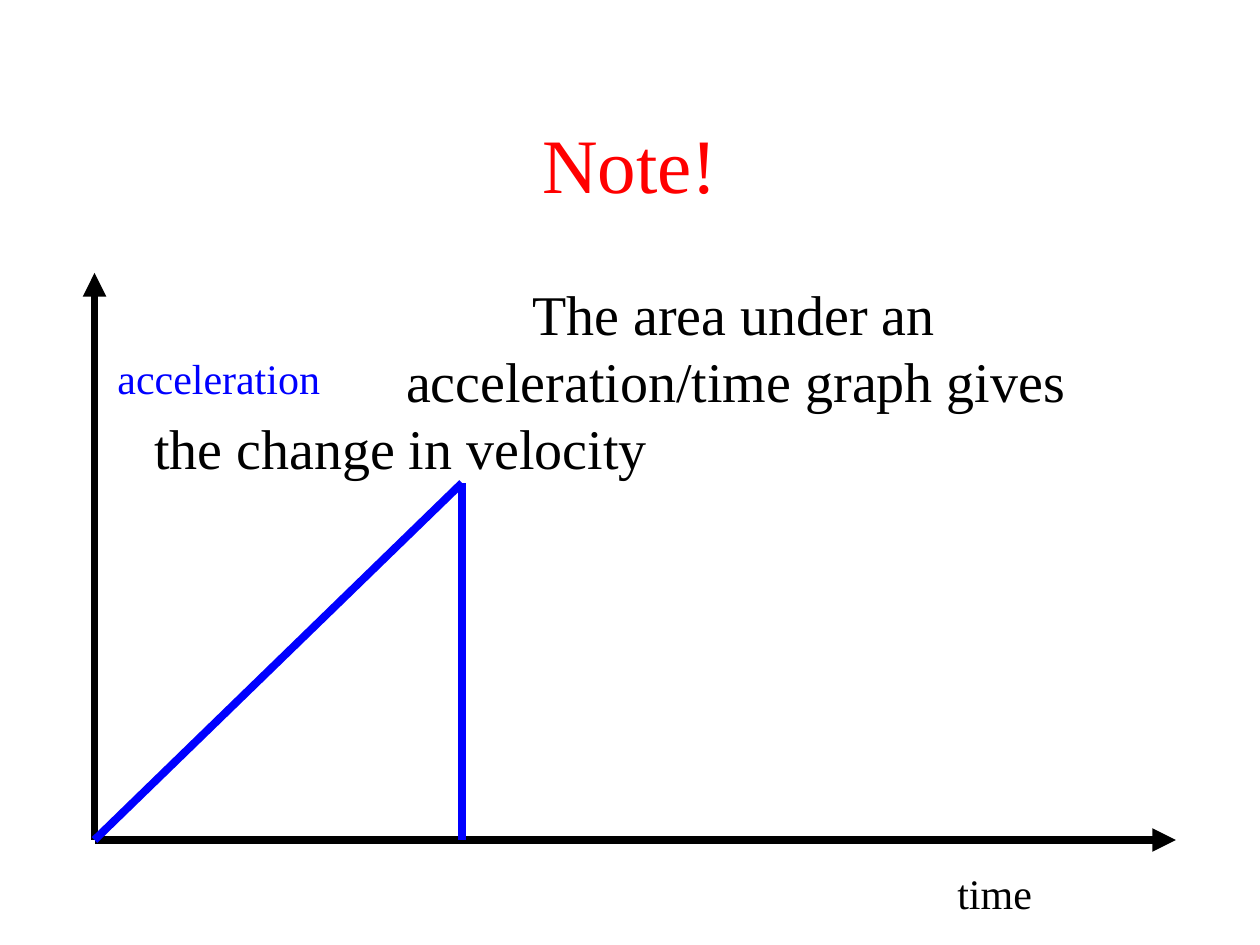
from lxml import etree
from pptx import Presentation
from pptx.dml.color import RGBColor
from pptx.enum.shapes import MSO_CONNECTOR
from pptx.enum.text import MSO_ANCHOR, PP_ALIGN
from pptx.oxml.ns import qn
from pptx.util import Pt

STRAIGHT = MSO_CONNECTOR.STRAIGHT
TOP, MIDDLE = MSO_ANCHOR.TOP, MSO_ANCHOR.MIDDLE
LEFT, CENTER = PP_ALIGN.LEFT, PP_ALIGN.CENTER

BLACK = RGBColor(0x00, 0x00, 0x00)
RED = RGBColor(0xFF, 0x00, 0x00)
BLUE = RGBColor(0x00, 0x00, 0xFF)

ORIGIN = (54, 480)
PEAK = (264, 276)
AXIS_TOP = 156
AXIS_RIGHT = 672

# Each line of the statement with its left indent
STATEMENT = [
    ("The area under an", 243),
    ("acceleration/time graph gives", 171),
    ("the change in velocity", 27),
]


class Deck:
    font = "Times New Roman"
    line_width = 4.5
    leading = 1.2

    def __init__(self, prs):
        self.s = prs.slides.add_slide(prs.slide_layouts[6])

    def text(self, lines, x, y, w, h, size, color, align=LEFT, anchor=TOP):
        """Add a text box from (text, left indent) pairs, one per paragraph."""
        sp = self.s.shapes.add_textbox(Pt(x), Pt(y), Pt(w), Pt(h))
        tf = sp.text_frame
        tf.word_wrap = True
        tf.vertical_anchor = anchor
        for i, (line, indent) in enumerate(lines):
            p = tf.add_paragraph() if i else tf.paragraphs[0]
            p.alignment = align
            p.line_spacing = Pt(size * self.leading)
            if indent:
                p._p.get_or_add_pPr().set("marL", str(Pt(indent)))
            r = p.add_run()
            r.text = line
            r.font.name = self.font
            r.font.size = Pt(size)
            r.font.color.rgb = color

    def line(self, start, end, color, arrow=False):
        sp = self.s.shapes.add_connector(STRAIGHT, *map(Pt, start + end))
        sp.line.color.rgb = color
        sp.line.width = Pt(self.line_width)
        if arrow:
            tail = etree.SubElement(sp.line._get_or_add_ln(), qn("a:tailEnd"))
            tail.set("type", "triangle")
        etree.SubElement(sp._element.spPr, qn("a:effectLst"))


def main():
    prs = Presentation()
    prs.slide_width, prs.slide_height = Pt(720), Pt(540)
    deck = Deck(prs)

    deck.text([("Note!", 0)], 54, 48, 612, 90, 44, RED, CENTER, MIDDLE)
    deck.text(STATEMENT, 54, 156, 612, 324, 32, BLACK)

    deck.line(ORIGIN, (ORIGIN[0], AXIS_TOP), BLACK, arrow=True)
    deck.line(ORIGIN, (AXIS_RIGHT, ORIGIN[1]), BLACK, arrow=True)
    deck.text([("acceleration", 0)], 60, 198, 132, 36, 24, BLUE)
    deck.text([("time", 0)], 540, 492, 108, 36, 24, BLACK)

    for start in (ORIGIN, (PEAK[0], ORIGIN[1])):
        deck.line(start, PEAK, BLUE)

    prs.save("out.pptx")


if __name__ == "__main__":
    main()
